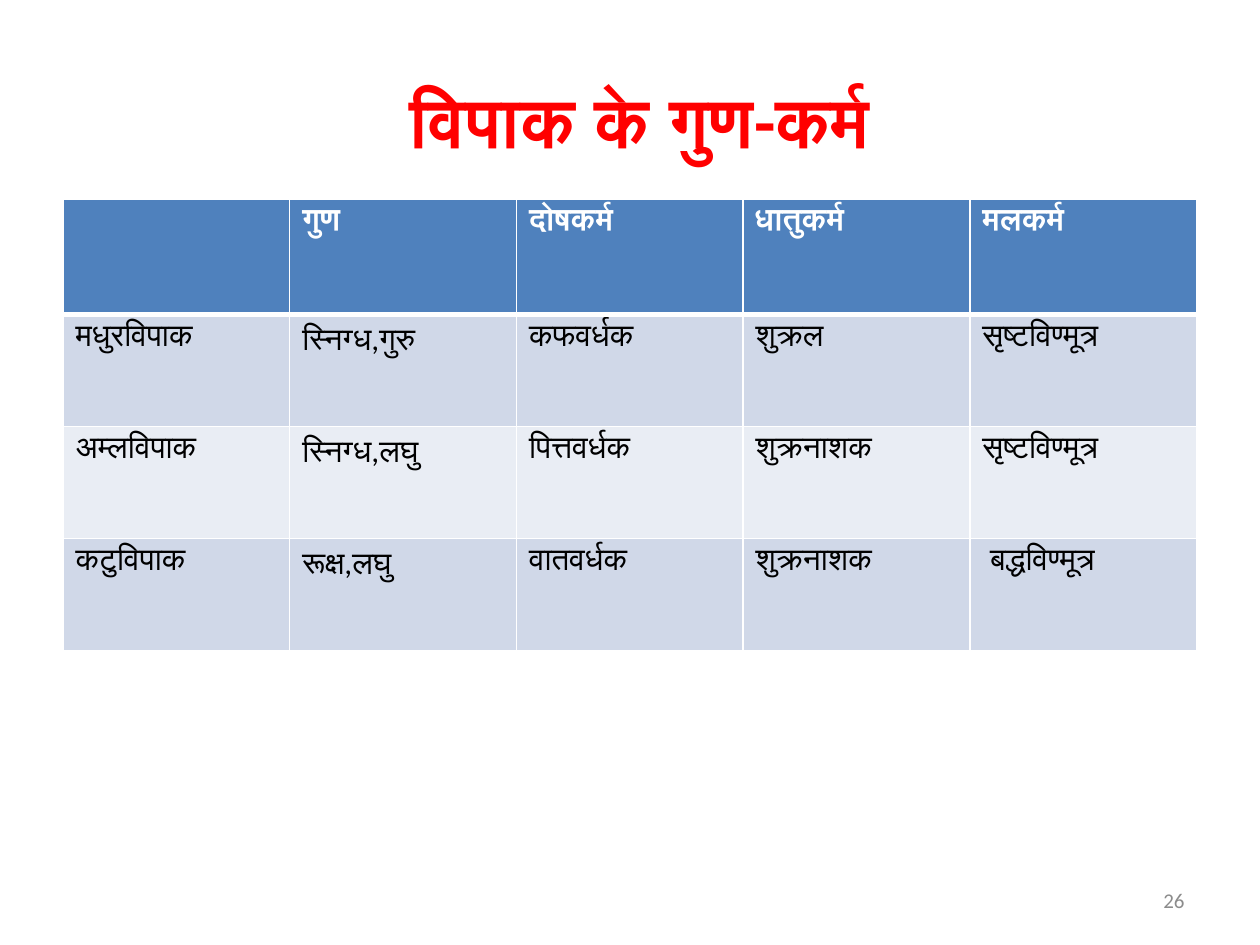
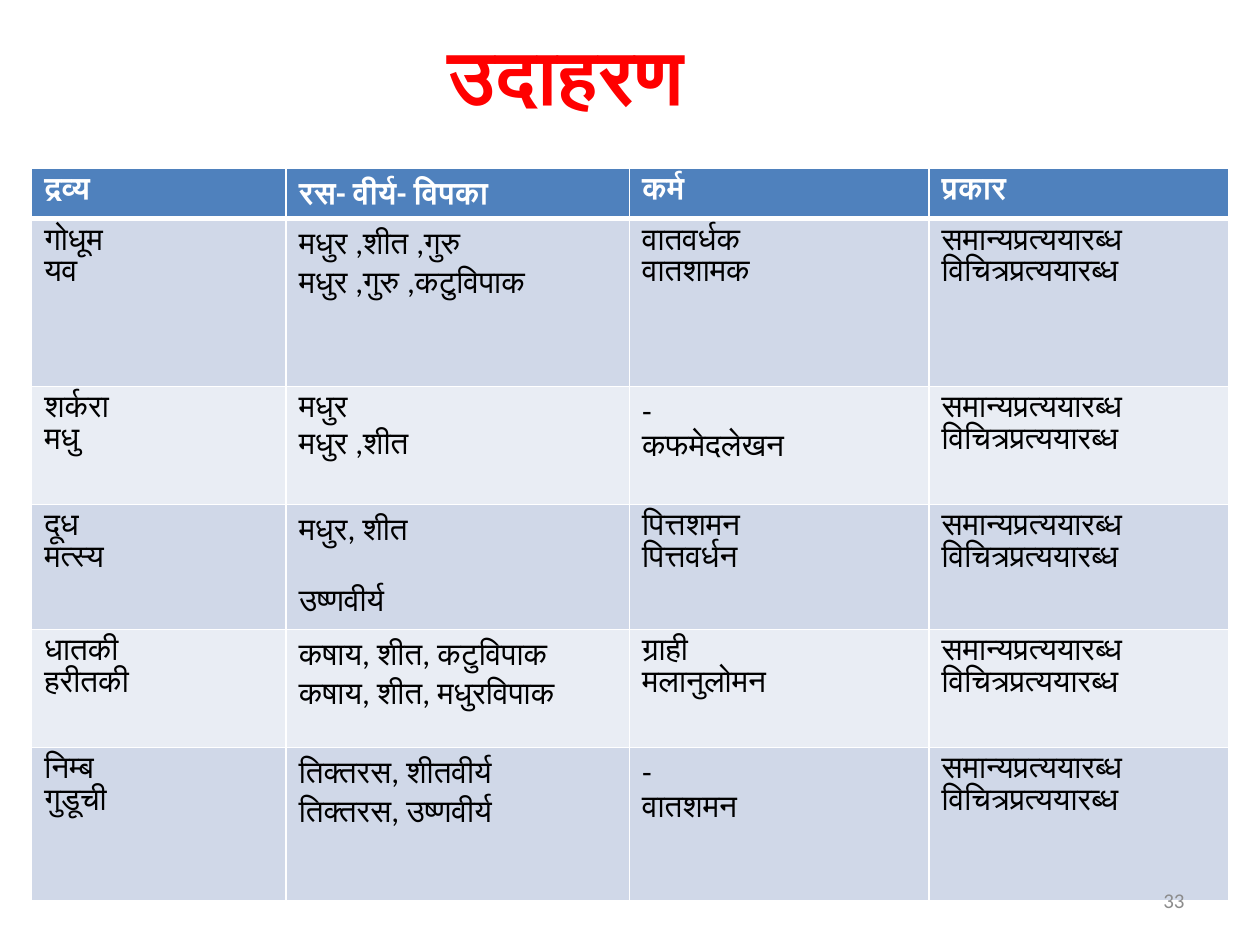
from dataclasses import dataclass

from lxml import etree
from pptx import Presentation
from pptx.dml.color import RGBColor
from pptx.enum.text import MSO_ANCHOR, PP_ALIGN
from pptx.oxml.ns import qn
from pptx.util import Cm, Pt

TOP, MIDDLE = MSO_ANCHOR.TOP, MSO_ANCHOR.MIDDLE
LEFT, CENTER, RIGHT = PP_ALIGN.LEFT, PP_ALIGN.CENTER, PP_ALIGN.RIGHT


@dataclass(frozen=True)
class Theme:
    font: str = "Calibri"
    title: str = "FF0000"
    header: str = "4F81BD"
    bands: tuple = ("D0D8E8", "E9EDF4")
    text: str = "000000"
    light: str = "FFFFFF"
    number: str = "8C8C8C"
    title_size: int = 44
    long_title_size: int = 40
    table_size: int = 18
    number_size: int = 12
    line_gap: int = 21
    border: int = 1
    header_border: int = 3


THEME = Theme()

ACTIONS = [
    ["", "गुण", "दोषकर्म", "धातुकर्म", "मलकर्म"],
    ["मधुरविपाक", "स्निग्ध,गुरु", "कफवर्धक", "शुक्रल", "सृष्टविण्मूत्र"],
    ["अम्लविपाक", "स्निग्ध,लघु", "पित्तवर्धक", "शुक्रनाशक", "सृष्टविण्मूत्र"],
    ["कटुविपाक", "रूक्ष,लघु", "वातवर्धक", "शुक्रनाशक", " बद्धविण्मूत्र"],
]

KINDS = "समान्यप्रत्ययारब्ध|विचित्रप्रत्ययारब्ध"
EXAMPLES = [
    ["द्रव्य", "रस- वीर्य- विपका", "कर्म", "प्रकार"],
    ["गोधूम|यव", "मधुर ,शीत ,गुरु|मधुर ,गुरु ,कटुविपाक", "वातवर्धक|वातशामक", KINDS],
    ["शर्करा|मधु", "मधुर|मधुर ,शीत", "-|कफमेदलेखन", KINDS],
    ["दूध|मत्स्य", "मधुर, शीत||उष्णवीर्य", "पित्तशमन|पित्तवर्धन", KINDS],
    ["धातकी|हरीतकी", "कषाय, शीत, कटुविपाक|कषाय, शीत, मधुरविपाक", "ग्राही|मलानुलोमन", KINDS],
    ["निम्ब|गुडूची", "तिक्तरस, शीतवीर्य|तिक्तरस, उष्णवीर्य", "-|वातशमन", KINDS],
]


def add_run(paragraph, text, size, color, bold=False):
    run = paragraph.add_run()
    run.text = text
    run.font.name = THEME.font
    run.font.size = Pt(size)
    run.font.bold = bold
    run.font.color.rgb = RGBColor.from_string(color)


def add_text_box(slide, left, top, width, height, alignment, anchor):
    box = slide.shapes.add_textbox(Cm(left), Cm(top), Cm(width), Cm(height))
    frame = box.text_frame
    frame.word_wrap = True
    frame.vertical_anchor = anchor
    paragraph = frame.paragraphs[0]
    paragraph.alignment = alignment
    return paragraph


def add_title(slide, text, box, size, anchor, lead=""):
    paragraph = add_text_box(slide, *box, CENTER, anchor)
    if lead:
        add_run(paragraph, lead, THEME.title_size, THEME.text)
    add_run(paragraph, text, size, THEME.title, bold=True)


def add_slide_number(slide, number):
    paragraph = add_text_box(slide, 18.2, 17.65, 5.93, 1.01, RIGHT, MIDDLE)
    add_run(paragraph, str(number), THEME.number_size, THEME.number)


def set_borders(cell, row_index):
    top = THEME.header_border if row_index == 1 else THEME.border
    bottom = THEME.header_border if row_index == 0 else THEME.border
    properties = cell._tc.get_or_add_tcPr()
    widths = {"lnL": THEME.border, "lnR": THEME.border, "lnT": top, "lnB": bottom}
    for side, width in widths.items():
        line = etree.SubElement(properties, qn(f"a:{side}"), w=str(Pt(width)))
        fill = etree.SubElement(line, qn("a:solidFill"))
        etree.SubElement(fill, qn("a:srgbClr"), val=THEME.light)


def fill_cell(cell, text, row_index):
    is_header = row_index == 0
    set_borders(cell, row_index)
    cell.fill.solid()
    background = THEME.header if is_header else THEME.bands[(row_index - 1) % 2]
    cell.fill.fore_color.rgb = RGBColor.from_string(background)
    paragraph, gap = None, False
    for line in filter_lines(text):
        if not line:
            gap = True
            continue
        frame = cell.text_frame
        paragraph = frame.add_paragraph() if paragraph else frame.paragraphs[0]
        paragraph.alignment = LEFT
        if gap:
            paragraph.space_before = Pt(THEME.line_gap)
            gap = False
        color = THEME.light if is_header else THEME.text
        add_run(paragraph, line, THEME.table_size, color, bold=is_header)


def filter_lines(text):
    return text.split("|") if text else []


def add_table(slide, rows, left, top, widths, heights):
    frame = slide.shapes.add_table(
        len(rows), len(widths), Cm(left), Cm(top), Cm(sum(widths)), Cm(sum(heights))
    )
    table = frame.table
    table.horz_banding = False
    for column, width in zip(table.columns, widths):
        column.width = Cm(width)
    for row, height in zip(table.rows, heights):
        row.height = Cm(height)
    for row_index, texts in enumerate(rows):
        for column_index, text in enumerate(texts):
            fill_cell(table.cell(row_index, column_index), text, row_index)


def main():
    presentation = Presentation()
    presentation.slide_width, presentation.slide_height = Cm(25.4), Cm(19.05)
    blank = presentation.slide_layouts[6]

    slide = presentation.slides.add_slide(blank)
    add_title(slide, "विपाक के गुण-कर्म", (1.27, 0.76, 22.86, 3.18),
              THEME.long_title_size, MIDDLE, lead=" ")
    add_table(slide, ACTIONS, 1.27, 4.01, [4.57] * 5, [2.33] + [2.26] * 3)
    add_slide_number(slide, 26)

    slide = presentation.slides.add_slide(blank)
    add_table(slide, EXAMPLES, 0.64, 3.39, [5.13, 6.92, 6.04, 6.04],
              [0.98, 3.38, 2.38, 2.44, 2.38, 3.1])
    add_title(slide, "उदाहरण", (2.74, 0.43, 17.35, 2.13), THEME.title_size, TOP)
    add_slide_number(slide, 33)

    presentation.save("out.pptx")


if __name__ == "__main__":
    main()
